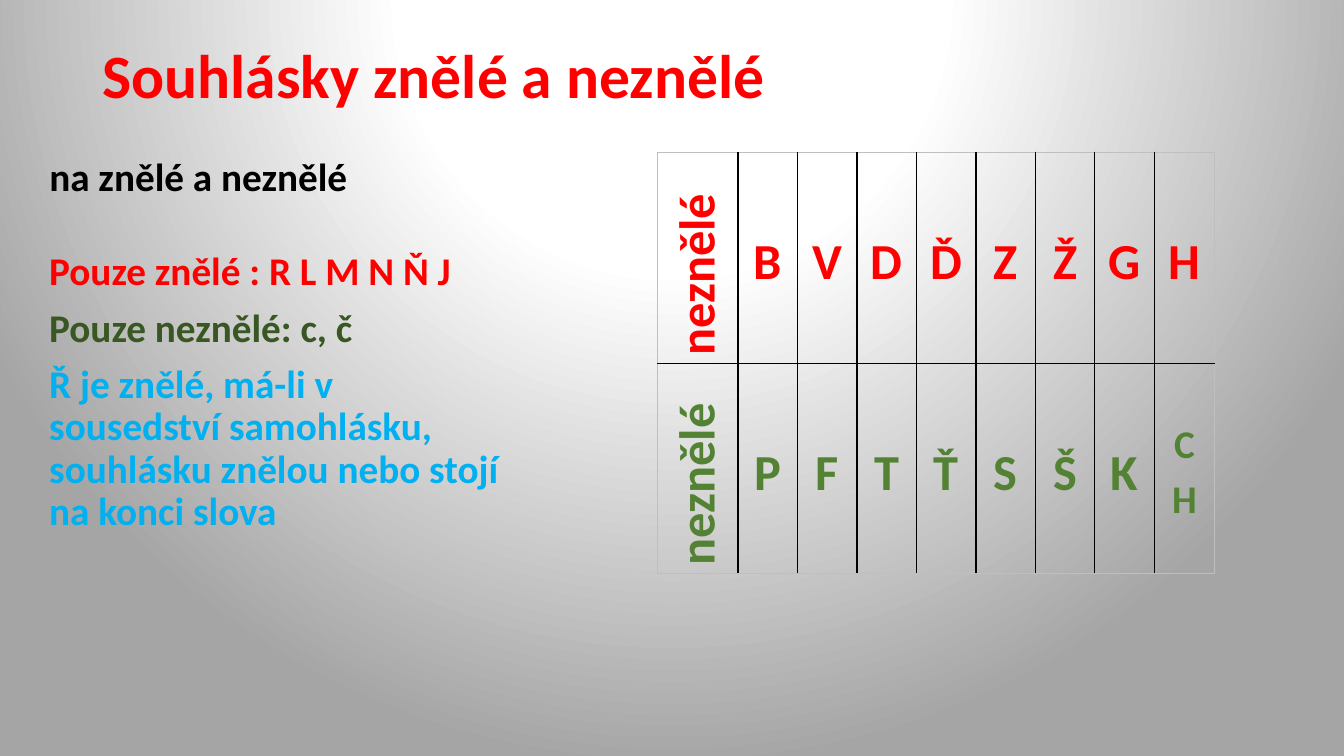
import dataclasses
import typing

import pptx
import pptx.dml.color
import pptx.enum.text
import pptx.oxml
import pptx.oxml.ns
import pptx.util

Inches = pptx.util.Inches
Align = pptx.enum.text.PP_ALIGN
Anchor = pptx.enum.text.MSO_ANCHOR


@dataclasses.dataclass(frozen=True)
class Theme:
    font: str = "Calibri"
    red: str = "FF0000"
    black: str = "000000"
    dark_green: str = "385723"
    green: str = "548235"
    blue: str = "00B0F0"
    white: str = "FFFFFF"
    grey: str = "A5A5A5"
    outer_border: str = "BFBFBF"
    title_size: int = 44
    letter_size: int = 36
    body_size: int = 28


THEME = Theme()


class Line(typing.NamedTuple):
    text: str
    color: str
    size: int = THEME.body_size


class TextBlock(typing.NamedTuple):
    left: float
    top: float
    width: float
    height: float
    lines: list[Line]
    space_before: int = 10


class ConsonantRow(typing.NamedTuple):
    label: str
    letters: list[str]
    color: str
    height: float


TEXT_BLOCKS = [
    TextBlock(0.92, 0.4, 11.5, 1.45, [Line("Souhlásky znělé a neznělé", THEME.red, THEME.title_size)], 0),
    TextBlock(0.39, 1.51, 11.68, 4.76, [Line("na znělé a neznělé", THEME.black)]),
    TextBlock(0.39, 2.45, 4.74, 2.93, [
        Line("Pouze znělé : R L M N Ň J", THEME.red),
        Line("Pouze neznělé: c, č", THEME.dark_green),
        Line("Ř je znělé, má-li v sousedství samohlásku, souhlásku znělou nebo stojí na konci slova", THEME.blue),
    ]),
]
CONSONANT_ROWS = [
    ConsonantRow("neznělé", ["B", "V", "D", "Ď", "Z", "Ž", "G", "H"], THEME.red, 2.1),
    ConsonantRow("neznělé", ["P", "F", "T", "Ť", "S", "Š", "K", "CH"], THEME.green, 2.08),
]
COLUMN_WIDTHS = [0.8] + [0.59] * 7 + [0.6]


def write_text(paragraph, text: str, *, color: str, size: int, line_spacing: float,
               space_before: int = 0, align=Align.LEFT) -> None:
    paragraph.alignment = align
    paragraph.line_spacing = line_spacing
    paragraph.space_before = pptx.util.Pt(space_before)
    run = paragraph.add_run()
    run.text = text
    run.font.name = THEME.font
    run.font.size = pptx.util.Pt(size)
    run.font.bold = True
    run.font.color.rgb = pptx.dml.color.RGBColor.from_string(color)


def paint_background(slide) -> None:
    stops = [(0, THEME.white), (35, THEME.white), (100, THEME.grey)]
    stop_xml = "".join(
        f'<a:gs pos="{position * 1000}"><a:srgbClr val="{color}"/></a:gs>' for position, color in stops
    )
    background = pptx.oxml.parse_xml(
        f'<p:bg {pptx.oxml.ns.nsdecls("p", "a")}><p:bgPr><a:gradFill rotWithShape="1">'
        f'<a:gsLst>{stop_xml}</a:gsLst><a:path path="circle">'
        '<a:fillToRect l="50000" t="-80000" r="50000" b="180000"/></a:path>'
        '</a:gradFill><a:effectLst/></p:bgPr></p:bg>'
    )
    slide.element.cSld.insert(0, background)


def add_text_block(slide, block: TextBlock) -> None:
    shape = slide.shapes.add_textbox(
        Inches(block.left), Inches(block.top), Inches(block.width), Inches(block.height)
    )
    frame = shape.text_frame
    frame.word_wrap = True
    for index, line in enumerate(block.lines):
        paragraph = frame.add_paragraph() if index else frame.paragraphs[0]
        write_text(paragraph, line.text, color=line.color, size=line.size,
                   line_spacing=0.9, space_before=block.space_before)


def set_borders(properties, outer_sides: dict[str, bool]) -> None:
    for index, (side, is_outer) in enumerate(outer_sides.items()):
        color = THEME.outer_border if is_outer else THEME.black
        properties.insert(index, pptx.oxml.parse_xml(
            f'<a:ln{side} {pptx.oxml.ns.nsdecls("a")} w="12700"><a:solidFill>'
            f'<a:srgbClr val="{color}"/></a:solidFill></a:ln{side}>'
        ))


def add_consonant_table(slide) -> None:
    row_count, column_count = len(CONSONANT_ROWS), len(COLUMN_WIDTHS)
    table = slide.shapes.add_table(
        row_count, column_count, Inches(6.52), Inches(1.51),
        Inches(sum(COLUMN_WIDTHS)), Inches(sum(row.height for row in CONSONANT_ROWS))
    ).table
    table.first_row = table.horz_banding = False
    for column, width in zip(table.columns, COLUMN_WIDTHS):
        column.width = Inches(width)
    for row_index, row in enumerate(CONSONANT_ROWS):
        table.rows[row_index].height = Inches(row.height)
        for column_index, text in enumerate([row.label] + row.letters):
            cell = table.cell(row_index, column_index)
            is_label = column_index == 0
            cell.margin_left = cell.margin_right = Inches(0.08)
            cell.margin_top = cell.margin_bottom = 0
            cell.vertical_anchor = Anchor.TOP if is_label else Anchor.MIDDLE
            cell.fill.background()
            properties = cell._tc.get_or_add_tcPr()
            if is_label:
                properties.set("vert", "vert270")
            set_borders(properties, {
                "L": column_index == 0,
                "R": column_index == column_count - 1,
                "T": row_index == 0,
                "B": row_index == row_count - 1,
            })
            write_text(cell.text_frame.paragraphs[0], text, color=row.color,
                       size=THEME.body_size if text == "CH" else THEME.letter_size,
                       line_spacing=1.15, align=Align.LEFT if is_label else Align.CENTER)


def main() -> None:
    presentation = pptx.Presentation()
    presentation.slide_width = Inches(13.33)
    presentation.slide_height = Inches(7.5)
    slide = presentation.slides.add_slide(presentation.slide_layouts[6])
    paint_background(slide)
    title, introduction, rules = TEXT_BLOCKS
    add_text_block(slide, title)
    add_text_block(slide, introduction)
    add_consonant_table(slide)
    add_text_block(slide, rules)
    presentation.save("out.pptx")


if __name__ == "__main__":
    main()
